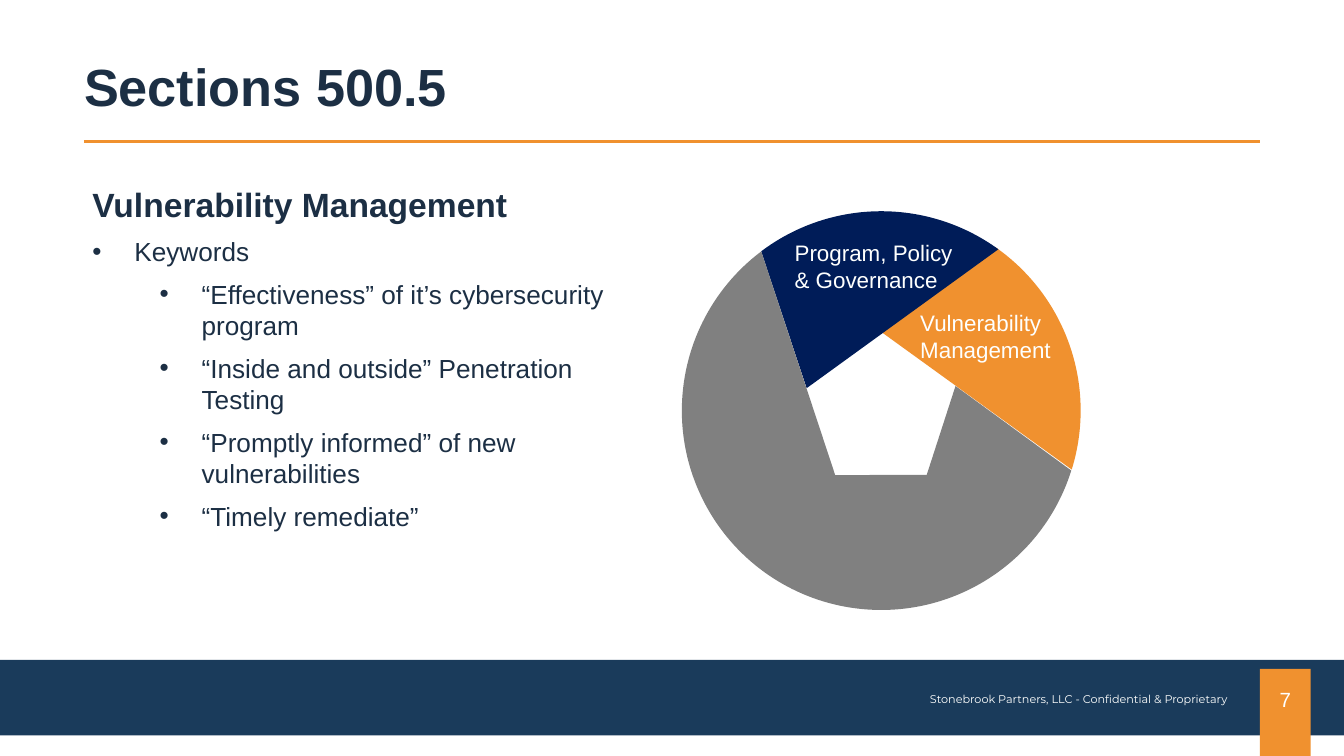
from math import cos, radians, sin, tan

from lxml import etree
from pptx import Presentation
from pptx.dml.color import RGBColor
from pptx.enum.shapes import MSO_CONNECTOR, MSO_SHAPE
from pptx.enum.text import MSO_ANCHOR, PP_ALIGN
from pptx.oxml.ns import qn
from pptx.util import Pt

RECTANGLE = MSO_SHAPE.RECTANGLE
STRAIGHT = MSO_CONNECTOR.STRAIGHT
TOP, MIDDLE, BOTTOM = MSO_ANCHOR.TOP, MSO_ANCHOR.MIDDLE, MSO_ANCHOR.BOTTOM
LEFT, CENTER, RIGHT = PP_ALIGN.LEFT, PP_ALIGN.CENTER, PP_ALIGN.RIGHT

INK, WHITE, ORANGE = "1C2F44", "FEFFFE", "F0912F"
BLUE, NAVY, GRAY = "1A3B5B", "001C58", "808080"
INSETS = (7.2, 3.6, 7.2, 3.6)
BULLET_HANG = 22.5

KEYWORDS = [
    "“Effectiveness” of it’s cybersecurity program",
    "“Inside and outside” Penetration Testing",
    "“Promptly informed” of new vulnerabilities",
    "“Timely remediate”",
]
SEGMENTS = [
    (17.5, 89.5, (146.6, 93.6), GRAY),
    (-55, 17.2, (107, 64.8), ORANGE),
    (-127, -54, (66.9, 94.8), NAVY),
    (160.5, 233, (82.2, 141.5), GRAY),
    (89, 161, (132, 141.2), GRAY),
]


def color(value):
    """Turn a hex string into a colour."""
    return RGBColor.from_string(value)


def paint(shape, fill):
    """Give a shape a flat fill without line or shadow."""
    shape.fill.solid()
    shape.fill.fore_color.rgb = color(fill)
    shape.line.fill.background()
    shape.shadow.inherit = False


def add_rectangle(slide, box, fill):
    """Add a plain rectangle."""
    shape = slide.shapes.add_shape(RECTANGLE, *map(Pt, box))
    paint(shape, fill)
    return shape


def format_frame(frame, anchor=TOP, insets=INSETS, wrap=True):
    """Set the anchor, insets and wrapping of a text frame."""
    frame.vertical_anchor = anchor
    frame.word_wrap = wrap
    frame.margin_left, frame.margin_top, frame.margin_right, frame.margin_bottom = map(Pt, insets)


def write(paragraph, text, size=14, font="Arial", fill=INK, bold=False,
          align=LEFT, after=0, spacing=None, bullet_indent=None):
    """Fill a paragraph with formatted text and an optional bullet."""
    paragraph.alignment = align
    paragraph.space_after = Pt(after)
    paragraph.line_spacing = spacing
    if bullet_indent is not None:
        properties = paragraph._p.get_or_add_pPr()
        properties.set("marL", str(Pt(bullet_indent)))
        properties.set("indent", str(-Pt(BULLET_HANG)))
        etree.SubElement(properties, qn("a:buFont")).set("typeface", "Arial")
        etree.SubElement(properties, qn("a:buChar")).set("char", "•")
    run = paragraph.add_run()
    run.text = text
    run.font.size = Pt(size)
    run.font.name = font
    run.font.bold = bold
    run.font.color.rgb = color(fill)


def add_text(slide, box, text, anchor=TOP, insets=INSETS, wrap=True, **style):
    """Add a text box with one paragraph."""
    frame = slide.shapes.add_textbox(*map(Pt, box)).text_frame
    format_frame(frame, anchor, insets, wrap)
    write(frame.paragraphs[0], text, **style)
    return frame


def add_header(slide, left, top, width, height):
    """Place the title above its orange rule."""
    add_text(slide, (left, top, width, 31.5), "Sections 500.5", anchor=BOTTOM,
             insets=(0, 0, 0, 0), size=28, bold=True, spacing=0.9)
    rule = slide.shapes.add_connector(
        STRAIGHT, Pt(left), Pt(top + height), Pt(left + width), Pt(top + height))
    rule.line.color.rgb = color(ORANGE)
    rule.line.width = Pt(1.5)
    etree.SubElement(rule._element.spPr, qn("a:effectLst"))


def add_footer(slide, left, top, width, height):
    """Place the footer band, its notice and the page number."""
    add_rectangle(slide, (left, top, width, height), BLUE)
    number = add_rectangle(slide, (left + width - 45, top + 4.8, 27.2, 46.7), ORANGE)
    format_frame(number.text_frame, MIDDLE, (0, 0, 0, 14.4), False)
    write(number.text_frame.paragraphs[0], "7", size=11, fill="FFFFFF", align=CENTER)
    add_text(slide, (left + width - 232, top + 13.8, 176.5, 14.5),
             "Stonebrook Partners, LLC - Confidential & Proprietary",
             anchor=MIDDLE, wrap=False, size=6, font="Montserrat", fill=WHITE, align=RIGHT)


def add_keywords(slide, *box):
    """Place the heading and its two levels of bullets."""
    frame = add_text(slide, box, "Vulnerability Management", anchor=MIDDLE,
                     size=18, bold=True, after=6)
    write(frame.add_paragraph(), "Keywords", after=6, bullet_indent=BULLET_HANG)
    for keyword in KEYWORDS:
        paragraph = frame.add_paragraph()
        paragraph.level = 1
        write(paragraph, keyword, after=6, bullet_indent=58.5)


def add_segment(slide, center, radius, inner, start, end, fill):
    """Add an inner corner joined to an arc of cubic curves."""
    quarters = [angle for angle in (-90, 0, 90, 180) if start < angle < end]
    angles = [start, *quarters, end]

    def point(angle, bend=0):
        """Return the arc point at an angle, moved along its tangent."""
        across, down = cos(radians(angle)), sin(radians(angle))
        return (Pt(center[0] + radius * (across - bend * down)),
                Pt(center[1] + radius * (down + bend * across)))

    builder = slide.shapes.build_freeform(*map(Pt, inner))
    builder.add_line_segments([point(angle) for angle in angles], close=True)
    shape = builder.convert_to_shape()
    lines = list(shape._element.iter(qn("a:lnTo")))[1:]
    for line, first, last in zip(lines, angles, angles[1:]):
        bend = 4 / 3 * tan(radians(last - first) / 4)
        line.tag = qn("a:cubicBezTo")
        for index, (x, y) in enumerate([point(first, bend), point(last, -bend)]):
            control = etree.Element(qn("a:pt"), x=str(x - shape.left), y=str(y - shape.top))
            line.insert(index, control)
    paint(shape, fill)


def add_wheel(slide, left, top, diameter):
    """Place five arc segments around a pentagon, with two labels."""
    radius = diameter / 2
    center = (left + radius, top + radius)
    for start, end, (across, down), fill in SEGMENTS:
        add_segment(slide, center, radius, (left + across, top + down), start, end, fill)
    labels = [(53.3, 11.3, "Program, Policy & Governance"),
              (120.6, 48.8, "Vulnerability Management")]
    for across, down, text in labels:
        add_text(slide, (left + across, top + down, 106, 36), text, size=12, fill=WHITE)


def main():
    """Build the slide and save it."""
    presentation = Presentation()
    presentation.slide_width, presentation.slide_height = Pt(720), Pt(405)
    slide = presentation.slides.add_slide(presentation.slide_layouts[6])
    add_footer(slide, 0, 353.5, 720, 40.5)
    add_header(slide, 45, 31.7, 630, 44)
    add_keywords(slide, 42.4, 94.1, 297.5, 195)
    add_wheel(slide, 365.3, 113.2, 213.6)
    presentation.save("out.pptx")


if __name__ == "__main__":
    main()
